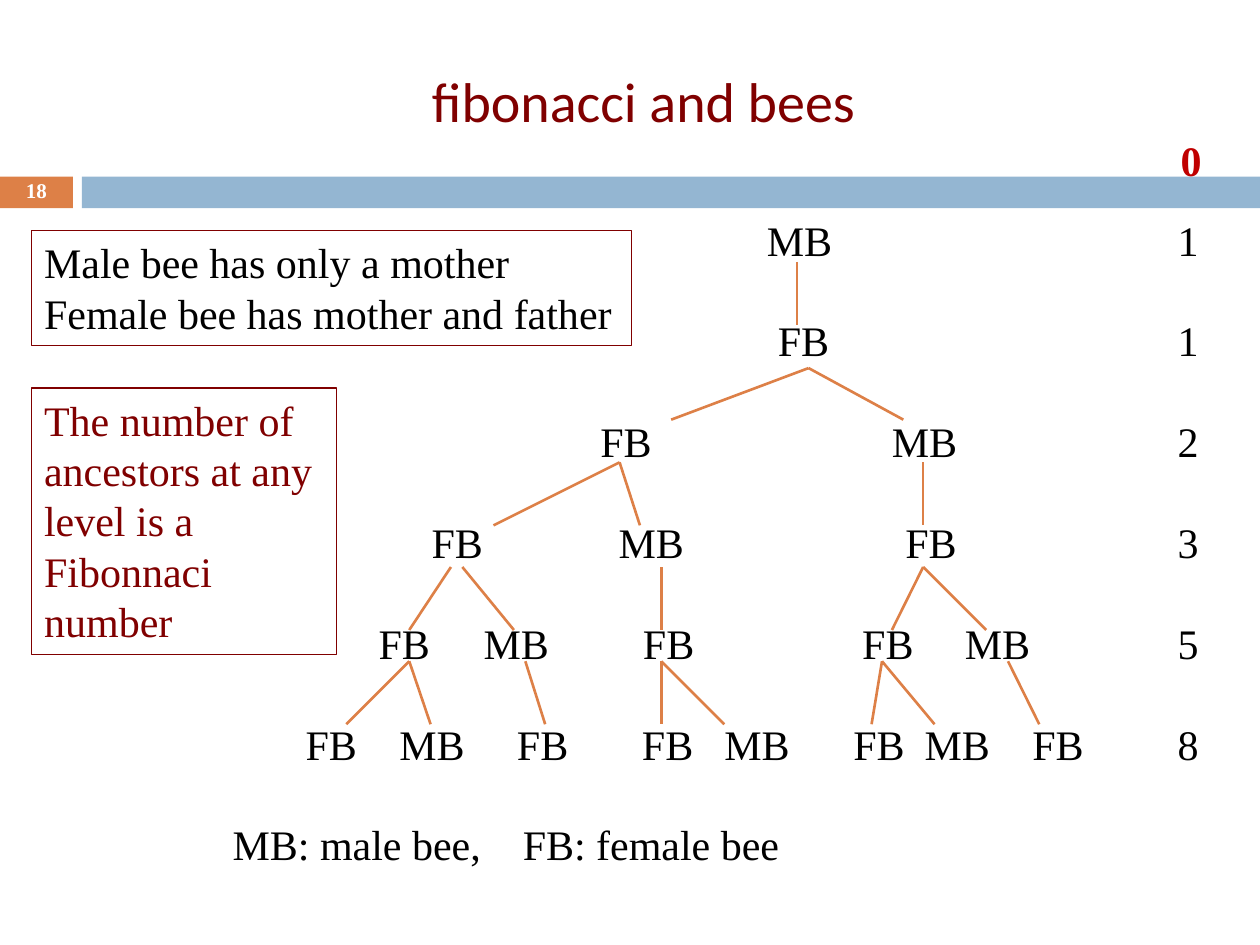
import pptx
import pptx.util
import pptx.dml.color
import pptx.enum.shapes
import pptx.enum.text
import pptx.oxml.ns
import lxml.etree

Cm = pptx.util.Cm
Pt = pptx.util.Pt
ALIGN = pptx.enum.text.PP_ALIGN
ANCHOR = pptx.enum.text.MSO_ANCHOR
RECT = pptx.enum.shapes.MSO_SHAPE.RECTANGLE
LINE = pptx.enum.shapes.MSO_CONNECTOR.STRAIGHT
SERIF = "Times New Roman"
MAROON, ORANGE, BLUE = "800000", "DD8047", "94B6D2"
PITCH = 28.8
INSET = 0.25
COUNT_X = 19.51

ROWS = [
    ([("MB", 11.68)], 1),
    ([("FB", 11.76)], 1),
    ([("FB", 8.18), ("MB", 14.2)], 2),
    ([("FB", 4.78), ("MB", 8.69), ("FB", 14.33)], 3),
    ([("FB", 3.71), ("MB", 5.97), ("FB", 9.04), ("FB", 13.46), ("MB", 15.67)], 5),
    ([("FB", 2.24), ("MB", 4.27), ("FB", 6.5), ("FB", 9.02), ("MB", 10.82),
      ("FB", 13.28), ("MB", 14.86), ("FB", 16.89)], 8),
]
LINKS = [
    (1.09, 2.36, [(11.63, 11.63)]),
    (3.23, 4.27, [(11.86, 9.09), (11.86, 13.77)]),
    (5.13, 6.4, [(8.05, 5.51), (8.05, 8.46), (14.17, 14.17)]),
    (7.24, 8.51, [(4.65, 3.81), (4.88, 5.92), (8.89, 8.89),
                  (14.17, 13.54), (14.17, 15.44)]),
    (9.14, 10.41, [(3.81, 2.54), (3.81, 4.24), (6.15, 6.55), (8.89, 8.89),
                   (8.89, 10.16), (13.34, 13.13), (13.34, 14.4), (15.88, 16.51)]),
]


def tint(target, code):
    if hasattr(target, "solid"):
        target.solid()
        target = target.fore_color
    target.rgb = pptx.dml.color.RGBColor.from_string(code)


def style(para, size=24, code="000000", face=SERIF, bold=False, align=ALIGN.LEFT):
    para.alignment = align
    for run in para.runs:
        run.font.size = Pt(size)
        run.font.name = face
        run.font.bold = bold
        tint(run.font.color, code)


def add_bar(slide, left, top, width, height, code):
    bar = slide.shapes.add_shape(RECT, Cm(left), Cm(top), Cm(width), Cm(height))
    bar.shadow.inherit = False
    tint(bar.fill, code)
    bar.line.fill.background()


def add_label(slide, left, top, width, height, text, **look):
    box = slide.shapes.add_textbox(Cm(left), Cm(top), Cm(width), Cm(height))
    frame = box.text_frame
    frame.text = text
    style(frame.paragraphs[0], **look)
    return frame


def add_head(slide, left, top, width, height):
    title = slide.shapes.title
    title.left, title.top = Cm(left), Cm(top)
    title.width, title.height = Cm(width), Cm(height)
    frame = title.text_frame
    frame.text = "fibonacci and bees"
    frame.vertical_anchor = ANCHOR.MIDDLE
    frame.margin_right = Cm(0.36)
    style(frame.paragraphs[0], 32, MAROON, "Calibri", align=ALIGN.CENTER)


def add_band(slide, left, top, width, height):
    tab, gap = 1.47, 0.18
    add_bar(slide, left, top, tab, height, ORANGE)
    add_bar(slide, left + tab + gap, top, width - tab - gap, height, BLUE)
    frame = add_label(slide, left, top - 0.03, tab, height + 0.06, "18",
                      size=12, code="FFFFFF", bold=True, align=ALIGN.CENTER)
    frame.word_wrap = True
    frame.vertical_anchor = ANCHOR.MIDDLE
    frame.paragraphs[0].line_spacing = 0.8


def add_note(slide, left, top, width, height, text, code, wrap):
    note = slide.shapes.add_shape(RECT, Cm(left), Cm(top), Cm(width), Cm(height))
    note.shadow.inherit = False
    note.fill.background()
    tint(note.line.fill, MAROON)
    note.line.width = Pt(0.75)
    frame = note.text_frame
    frame.text = text
    frame.word_wrap = wrap
    frame.vertical_anchor = ANCHOR.TOP
    for para in frame.paragraphs:
        style(para, code=code)
        para.line_spacing = Pt(PITCH)


def set_tabs(para, stops):
    props = para._p.get_or_add_pPr()
    tabs = lxml.etree.SubElement(props, pptx.oxml.ns.qn("a:tabLst"))
    for place, kind in stops:
        tab = lxml.etree.SubElement(tabs, pptx.oxml.ns.qn("a:tab"))
        tab.set("pos", str(Cm(place - INSET)))
        tab.set("algn", kind)


def add_link(slide, start_x, start_y, end_x, end_y):
    link = slide.shapes.add_connector(
        LINE, Cm(start_x), Cm(start_y), Cm(end_x), Cm(end_y))
    tint(link.line.fill, ORANGE)
    link.line.width = Pt(1.5)
    lxml.etree.SubElement(link._element.spPr, pptx.oxml.ns.qn("a:effectLst"))


def add_tree(slide, left, top, width, height):
    lines, stops = [], []
    for nodes, count in ROWS:
        cells = nodes + [(str(count), COUNT_X)]
        lines.append("".join("\t" + name for name, place in cells))
        stops.append([(place, "ctr") for name, place in cells])
    lines.append("MB: male bee,\tFB: female bee")
    stops.append([(6.1, "l")])

    box = slide.shapes.add_textbox(Cm(left), Cm(top), Cm(width), Cm(height))
    frame = box.text_frame
    frame.word_wrap = True
    frame.text = "\n".join(lines)
    for para, marks in zip(frame.paragraphs, stops):
        style(para)
        para.line_spacing = Pt(PITCH)
        para.space_after = Pt(PITCH)
        set_tabs(para, marks)

    for high, low, pairs in LINKS:
        for start, end in pairs:
            add_link(slide, left + start, top + high, left + end, top + low)


def main():
    deck = pptx.Presentation()
    deck.slide_width, deck.slide_height = Cm(25.4), Cm(19.05)
    slide = deck.slides.add_slide(deck.slide_layouts[5])
    add_band(slide, 0, 3.56, 25.4, 0.64)
    add_head(slide, 1.7, 0.64, 22.66, 2.74)
    add_tree(slide, 4.44, 4.19, 20.96, 13.61)
    add_note(slide, 0.64, 4.65, 12.09, 2.31,
             "Male bee has only a mother\nFemale bee has mother and father",
             "000000", False)
    add_note(slide, 0.64, 7.82, 6.15, 5.38,
             "The number of ancestors at any level is a Fibonnaci number",
             MAROON, True)
    add_label(slide, 23.55, 2.59, 0.94, 1.27, "0", code="C00000", bold=True)
    deck.save("out.pptx")


if __name__ == "__main__":
    main()
